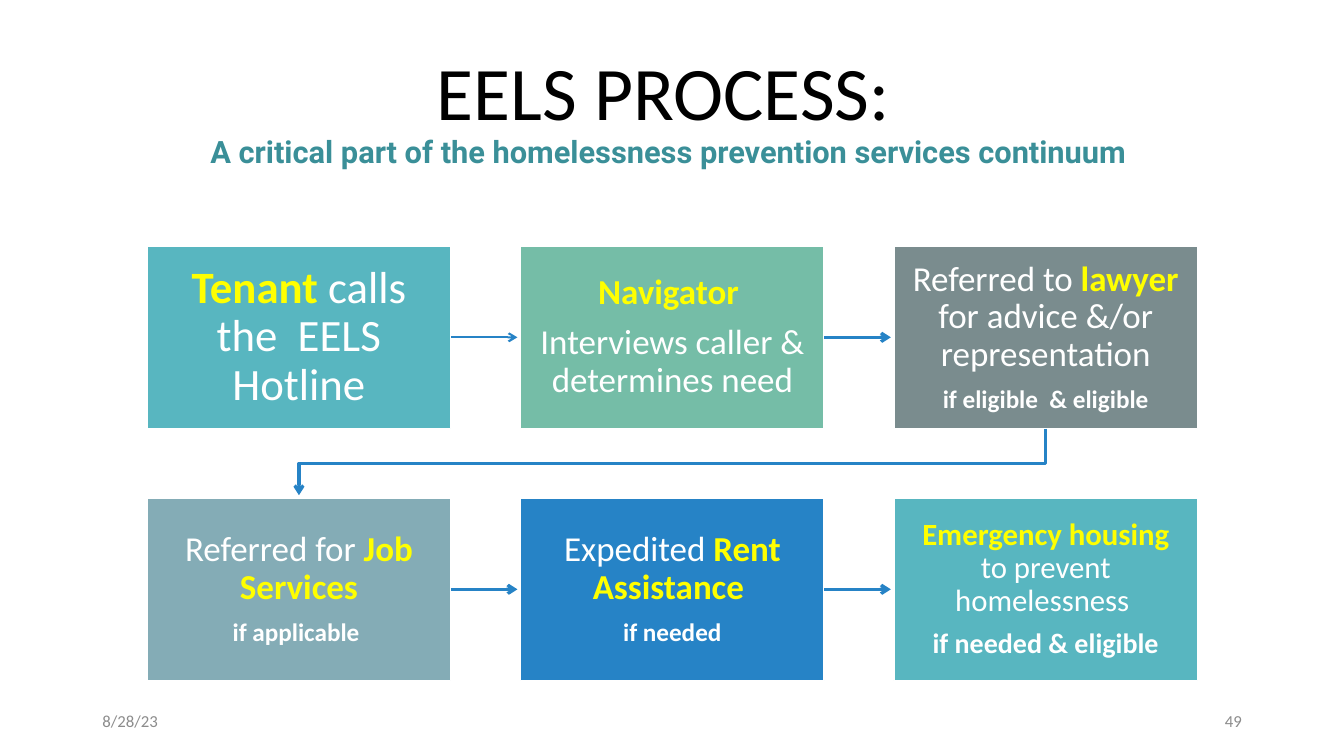
from dataclasses import dataclass

from lxml.etree import SubElement
from pptx import Presentation
from pptx.dml.color import RGBColor
from pptx.enum.shapes import MSO_CONNECTOR, MSO_SHAPE
from pptx.enum.text import MSO_ANCHOR as Anchor, MSO_AUTO_SIZE as AutoSize, PP_ALIGN as Align
from pptx.oxml.ns import qn
from pptx.util import Cm, Pt

COLORS = {
    "black": "000000", "white": "FFFFFF", "yellow": "FFFF00", "heading": "3A8F98",
    "footer": "8C8C8C", "teal": "58B6C0", "green": "75BDA7", "slate": "7A8C8E",
    "steel": "84ACB6", "blue": "2683C6",
}
LEFT, TOP = 3.71, 6.2
BOX_WIDTH, BOX_HEIGHT = 7.65, 4.6
COLUMN_STEP, ROW_STEP = 9.41, 6.35
ARROW_LENGTH = 1.68
COLUMNS = 3


@dataclass(frozen=True)
class Span:
    text: str
    size: float
    color: str = "white"
    bold: bool = False
    font: str = "Calibri"


@dataclass(frozen=True)
class Step:
    fill: str
    lines: list[list[Span]]
    arrow_width: float = 2.25


@dataclass(frozen=True)
class Footer:
    text: str
    left: float
    align: Align


STEPS = [
    Step("teal", [[Span("Tenant", 32, "yellow", True),
                   Span(" calls the  EELS Hotline", 32)]], 1.5),
    Step("green", [[Span("Navigator ", 25, "yellow", True)],
                   [Span("Interviews caller & determines need", 25)]]),
    Step("slate", [[Span("Referred to ", 25), Span("lawyer", 25, "yellow", True),
                    Span(" for advice &/or representation", 25)],
                   [Span("if eligible  & eligible", 18, bold=True)]]),
    Step("steel", [[Span("Referred for ", 25), Span("Job Services", 25, "yellow", True)],
                   [Span("if applicable ", 18, bold=True)]]),
    Step("blue", [[Span("Expedited ", 25), Span("Rent Assistance ", 25, "yellow", True)],
                  [Span("if needed", 18, bold=True)]]),
    Step("teal", [[Span("Emergency housing ", 22, "yellow", True),
                   Span("to prevent homelessness ", 22)],
                  [Span("if needed & eligible", 20, bold=True)]]),
]
FOOTERS = [Footer("8/28/23", 2.33, Align.LEFT), Footer("49", 23.93, Align.RIGHT)]


def rgb(name: str) -> RGBColor:
    return RGBColor.from_string(COLORS[name])


def set_values(target, values: dict) -> None:
    for name, value in values.items():
        setattr(target, name, value)


def add_span(para, span: Span) -> None:
    run = para.add_run()
    run.text = span.text
    set_values(run.font, {"name": span.font, "size": Pt(span.size), "bold": span.bold})
    run.font.color.rgb = rgb(span.color)


def format_line(line, color: str, width: float) -> None:
    line.color.rgb = rgb(color)
    line.width = Pt(width)


def add_arrowhead(line) -> None:
    """Put an open arrowhead at the end of a line."""
    SubElement(line._get_or_add_ln(), qn("a:tailEnd"), type="arrow")


def fill_title(title) -> None:
    set_values(title, {"left": Cm(2.33), "top": Cm(1.01), "width": Cm(29.21), "height": Cm(3.68)})
    set_values(title.text_frame, {"vertical_anchor": Anchor.MIDDLE, "word_wrap": True,
                                  "auto_size": AutoSize.NONE})
    para = title.text_frame.paragraphs[0]
    set_values(para, {"alignment": Align.CENTER, "line_spacing": 0.9})
    add_span(para, Span("EELS PROCESS: ", 54, "black"))
    para.add_line_break()
    add_span(para, Span("A critical part of the homelessness prevention services continuum ",
                        22, "heading", True, "Roboto"))


def add_footer(page, footer: Footer) -> None:
    box = page.shapes.add_textbox(Cm(footer.left), Cm(17.65), Cm(7.62), Cm(1.02))
    set_values(box.text_frame, {"vertical_anchor": Anchor.MIDDLE, "word_wrap": True})
    para = box.text_frame.paragraphs[0]
    set_values(para, {"alignment": footer.align, "space_after": Pt(6)})
    add_span(para, Span(footer.text, 12, "footer"))


def add_step(page, step: Step, left: float, top: float) -> None:
    box = page.shapes.add_shape(MSO_SHAPE.RECTANGLE, Cm(left), Cm(top),
                                Cm(BOX_WIDTH), Cm(BOX_HEIGHT))
    box.shadow.inherit = False
    box.fill.solid()
    box.fill.fore_color.rgb = rgb(step.fill)
    format_line(box.line, "white", 1)
    frame = box.text_frame
    set_values(frame, {"word_wrap": True, "vertical_anchor": Anchor.MIDDLE})
    set_values(frame, {f"margin_{side}": Cm(0.38) for side in ("left", "right", "top", "bottom")})
    for index, spans in enumerate(step.lines):
        para = frame.add_paragraph() if index else frame.paragraphs[0]
        set_values(para, {"alignment": Align.CENTER, "line_spacing": 0.9,
                          "space_after": Pt(round(0.35 * spans[0].size, 1))})
        for span in spans:
            add_span(para, span)


def add_arrow(page, left: float, middle: float, width: float) -> None:
    arrow = page.shapes.add_connector(MSO_CONNECTOR.STRAIGHT, Cm(left), Cm(middle),
                                      Cm(left + ARROW_LENGTH), Cm(middle))
    format_line(arrow.line, "blue", width)
    add_arrowhead(arrow.line)
    SubElement(arrow._element.spPr, qn("a:effectLst"))


def add_row_link(page) -> None:
    """Lead from the last box of the first row to the first box of the second."""
    start_x = LEFT + (COLUMNS - 1) * COLUMN_STEP + BOX_WIDTH / 2
    end_x = LEFT + BOX_WIDTH / 2
    start_y = TOP + BOX_HEIGHT
    turn_y = start_y + (ROW_STEP - BOX_HEIGHT) / 2
    corners = [(start_x, turn_y), (end_x, turn_y), (end_x, start_y + ARROW_LENGTH)]
    builder = page.shapes.build_freeform(Cm(start_x), Cm(start_y))
    builder.add_line_segments([(Cm(x), Cm(y)) for x, y in corners], close=False)
    link = builder.convert_to_shape()
    link.fill.background()
    format_line(link.line, "blue", 2.25)
    add_arrowhead(link.line)
    link.shadow.inherit = False


def main() -> None:
    deck = Presentation()
    set_values(deck, {"slide_width": Cm(33.87), "slide_height": Cm(19.05)})
    page = deck.slides.add_slide(deck.slide_layouts.get_by_name("Title Only"))
    fill_title(page.shapes.title)
    for footer in FOOTERS:
        add_footer(page, footer)
    for index, step in enumerate(STEPS):
        row, column = divmod(index, COLUMNS)
        left, top = LEFT + column * COLUMN_STEP, TOP + row * ROW_STEP
        add_step(page, step, left, top)
        if column < COLUMNS - 1:
            add_arrow(page, left + BOX_WIDTH, top + BOX_HEIGHT / 2, step.arrow_width)
    add_row_link(page)
    deck.save("out.pptx")


if __name__ == "__main__":
    main()
